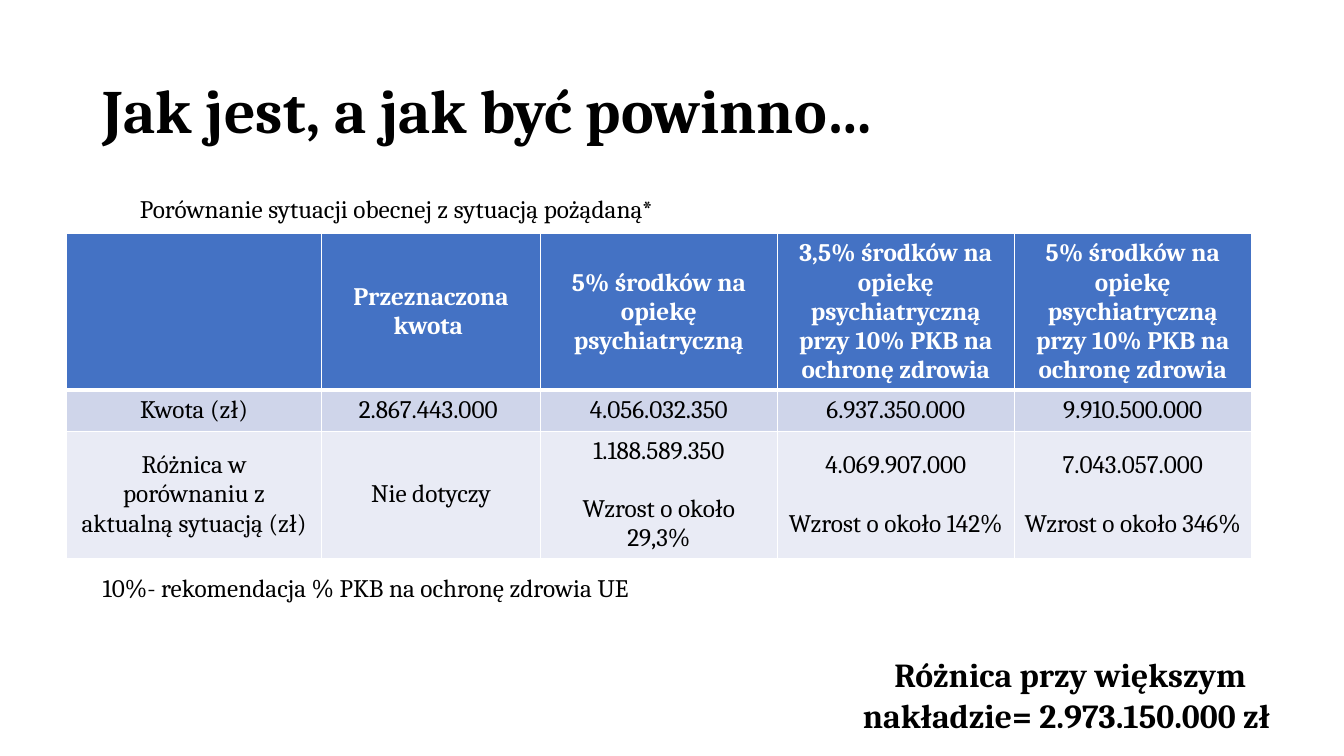
from dataclasses import dataclass

from lxml.etree import SubElement
from pptx import Presentation
from pptx.dml.color import RGBColor
from pptx.enum.text import MSO_ANCHOR, MSO_AUTO_SIZE, PP_ALIGN
from pptx.oxml.ns import qn
from pptx.slide import Slide
from pptx.table import _Cell
from pptx.text.text import TextFrame
from pptx.util import Emu, Pt

PX = 9144  # EMU; 100 px to the inch
FONT = "Cambria"
BLACK, WHITE = "000000", "FFFFFF"


@dataclass(frozen=True)
class Caption:
    text: str
    left: int
    top: int
    width: int
    height: int
    size: int = 18
    bold: bool = False
    align: PP_ALIGN = PP_ALIGN.LEFT
    anchor: MSO_ANCHOR = MSO_ANCHOR.TOP
    line_spacing: float = 1.0
    grow: bool = True


@dataclass(frozen=True)
class RowStyle:
    height: int
    fill: str
    color: str = BLACK
    bold: bool = False
    top_line: int = 1
    bottom_line: int = 1


CAPTIONS = [
    Caption("Jak jest, a jak być powinno…", 92, 40, 1150, 145, size=44, bold=True,
            anchor=MSO_ANCHOR.MIDDLE, line_spacing=0.9, grow=False),
    Caption("Porównanie sytuacji obecnej z sytuacją pożądaną*", 129, 187, 587, 40),
    Caption("Różnica przy większym nakładzie= 2.973.150.000 zł ", 833, 644, 457, 91,
            size=24, bold=True, align=PP_ALIGN.CENTER),
    Caption("10%- rekomendacja % PKB na ochronę zdrowia UE", 92, 563, 678, 40),
]

TABLE_LEFT, TABLE_TOP = 66, 232
COLUMN_WIDTHS = [253, 217, 235, 235, 235]
ROW_STYLES = [
    RowStyle(155, "4472C4", WHITE, bold=True, bottom_line=3),
    RowStyle(41, "CFD5EA", top_line=3),
    RowStyle(125, "E9EBF5"),
]
COMPARISON = [
    ["", "Przeznaczona kwota ", "5% środków na opiekę psychiatryczną",
     "3,5% środków na opiekę psychiatryczną przy 10% PKB na ochronę zdrowia",
     "5% środków na opiekę psychiatryczną przy 10% PKB na ochronę zdrowia"],
    ["Kwota (zł)", "2.867.443.000 ", "4.056.032.350", "6.937.350.000", "9.910.500.000"],
    ["Różnica w porównaniu z aktualną sytuacją (zł)", "Nie dotyczy",
     "1.188.589.350\nWzrost o około 29,3%",
     "4.069.907.000\nWzrost o około 142%",
     "7.043.057.000\nWzrost o około 346%"],
]


def px(length: int) -> Emu:
    return Emu(length * PX)


def rgb(color: str) -> RGBColor:
    return RGBColor.from_string(color)


def write(frame: TextFrame, text: str, *, size: int = 18, color: str = BLACK,
          bold: bool = False, align: PP_ALIGN = PP_ALIGN.LEFT,
          line_spacing: float = 1.0, gap: int = 0) -> None:
    """Write one paragraph per line of text, with gap points between them."""
    for index, line in enumerate(text.split("\n")):
        paragraph = frame.add_paragraph() if index else frame.paragraphs[0]
        paragraph.alignment = align
        paragraph.line_spacing = line_spacing
        if index:
            paragraph.space_before = Pt(gap)
        if line:
            run = paragraph.add_run()
            run.text = line
            run.font.name = FONT
            run.font.size = Pt(size)
            run.font.bold = bold
            run.font.color.rgb = rgb(color)


def add_caption(slide: Slide, caption: Caption) -> None:
    box = slide.shapes.add_textbox(px(caption.left), px(caption.top),
                                   px(caption.width), px(caption.height))
    frame = box.text_frame
    frame.word_wrap = True
    frame.auto_size = MSO_AUTO_SIZE.SHAPE_TO_FIT_TEXT if caption.grow else MSO_AUTO_SIZE.NONE
    frame.vertical_anchor = caption.anchor
    write(frame, caption.text, size=caption.size, bold=caption.bold,
          align=caption.align, line_spacing=caption.line_spacing)


def set_borders(cell: _Cell, style: RowStyle) -> None:
    properties = cell._tc.get_or_add_tcPr()
    widths = {"L": 1, "R": 1, "T": style.top_line, "B": style.bottom_line}
    for side, width in widths.items():
        line = SubElement(properties, qn(f"a:ln{side}"), w=str(Pt(width)))
        SubElement(SubElement(line, qn("a:solidFill")), qn("a:srgbClr"), val=WHITE)


def fill_cell(cell: _Cell, text: str, style: RowStyle) -> None:
    set_borders(cell, style)
    cell.fill.solid()
    cell.fill.fore_color.rgb = rgb(style.fill)
    cell.vertical_anchor = MSO_ANCHOR.MIDDLE
    write(cell.text_frame, text, color=style.color, bold=style.bold,
          align=PP_ALIGN.CENTER, gap=21)


def add_comparison(slide: Slide) -> None:
    table = slide.shapes.add_table(
        len(ROW_STYLES), len(COLUMN_WIDTHS), px(TABLE_LEFT), px(TABLE_TOP),
        px(sum(COLUMN_WIDTHS)), px(sum(style.height for style in ROW_STYLES))).table
    table.horz_banding = False
    for column, width in zip(table.columns, COLUMN_WIDTHS):
        column.width = px(width)
    for row, style, texts in zip(table.rows, ROW_STYLES, COMPARISON):
        row.height = px(style.height)
        for cell, text in zip(row.cells, texts):
            fill_cell(cell, text, style)


def main() -> None:
    presentation = Presentation()
    presentation.slide_width, presentation.slide_height = px(1333), px(750)
    slide = presentation.slides.add_slide(presentation.slide_layouts[6])
    add_comparison(slide)
    for caption in CAPTIONS:
        add_caption(slide, caption)
    presentation.save("out.pptx")


if __name__ == "__main__":
    main()
